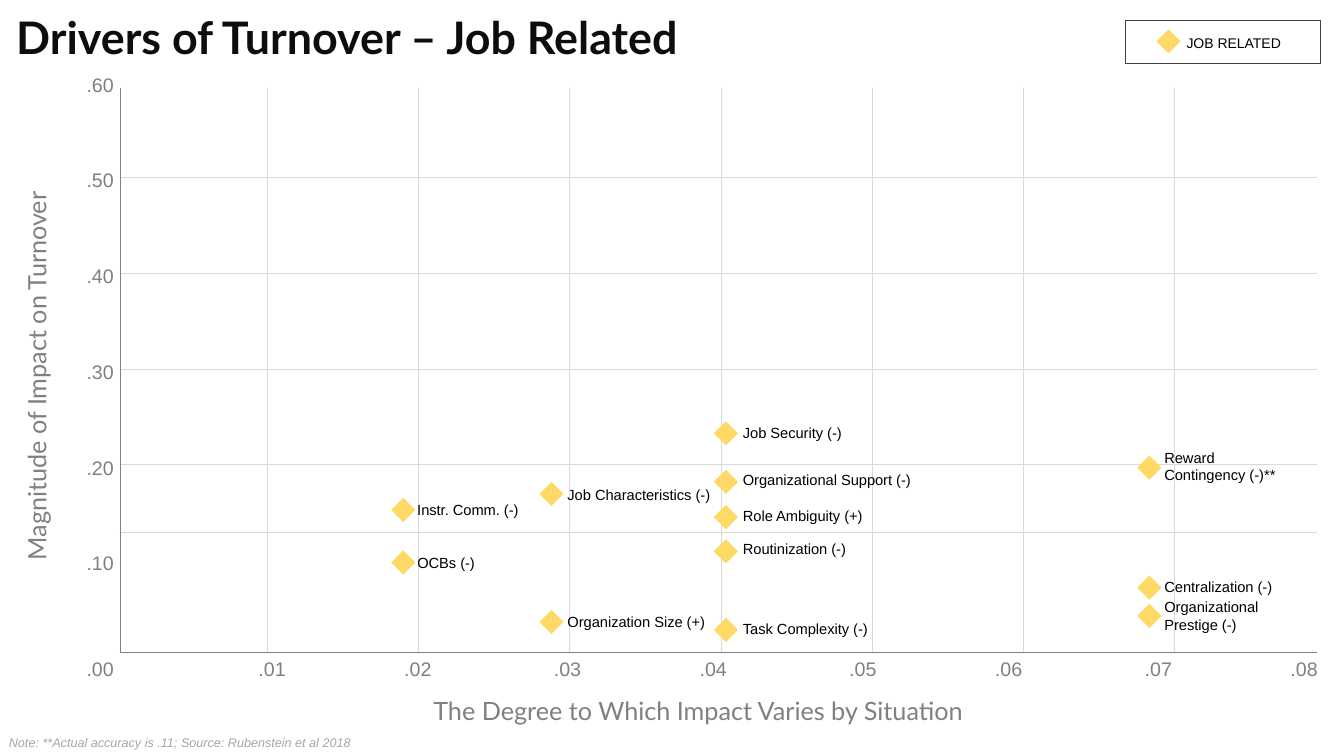
from lxml.etree import SubElement
from pptx import Presentation
from pptx.dml.color import RGBColor
from pptx.enum.shapes import MSO_CONNECTOR, MSO_SHAPE
from pptx.enum.text import MSO_ANCHOR, MSO_AUTO_SIZE, PP_ALIGN
from pptx.oxml.ns import qn
from pptx.util import Inches, Pt

COLORS = {
    "title": "0D0D0D",
    "text": "000000",
    "axis": "808080",
    "grid": "D9D9D9",
    "note": "A6A6A6",
    "frame": "404040",
    "driver": "FFD966",
    "paper": "FFFFFF",
}
LEFT, RIGHT, TOP, BOTTOM = 1.19, 13.06, 0.87, 6.47

# Per column: marker left, label left, and
# (driver, marker top, label top, label width)
DRIVERS = [
    (3.88, 4.04, [
        ("Instr. Comm. (-)", 4.94, 4.92, 1.23),
        ("OCBs (-)", 5.46, 5.44, 0.78),
    ]),
    (5.35, 5.53, [
        ("Job Characteristics (-)", 4.78, 4.77, 1.64),
        ("Organization Size (+)", 6.05, 6.03, 1.59),
    ]),
    (7.08, 7.27, [
        ("Job Security (-)", 4.18, 4.15, 1.2),
        ("Organizational Support (-)", 4.66, 4.62, 1.9),
        ("Role Ambiguity (+)", 5.01, 4.98, 1.42),
        ("Routinization (-)", 5.35, 5.3, 1.25),
        ("Task Complexity (-)", 6.13, 6.1, 1.48),
    ]),
    (11.28, 11.45, [
        ("Reward Contingency (-)**", 4.52, 4.4, 1.54),
        ("Centralization (-)", 5.71, 5.68, 1.29),
        ("Organizational Prestige (-)", 5.99, 5.88, 1.54),
    ]),
]
TWO_LINE = {"Reward Contingency (-)**", "Organizational Prestige (-)"}


def rgb(name):
    return RGBColor.from_string(COLORS[name])


def set_text(shape, text, size, color, font="Arial", wrap=False,
             align=PP_ALIGN.LEFT, anchor=MSO_ANCHOR.TOP):
    """Fill a shape with one formatted paragraph and return its font."""
    frame = shape.text_frame
    frame.text = text
    frame.word_wrap = wrap
    frame.auto_size = MSO_AUTO_SIZE.SHAPE_TO_FIT_TEXT
    frame.vertical_anchor = anchor
    para = frame.paragraphs[0]
    para.alignment = align
    style = para.runs[0].font
    style.name, style.size = font, Pt(size)
    style.color.rgb = rgb(color)
    return style


def add_text(slide, box, text, size, color, **format):
    shape = slide.shapes.add_textbox(*map(Inches, box))
    set_text(shape, text, size, color, **format)
    return shape


def add_line(slide, start, end, color):
    line = slide.shapes.add_connector(
        MSO_CONNECTOR.STRAIGHT, *map(Inches, start + end))
    line.line.color.rgb = rgb(color)
    line.line.width = Pt(0.25)
    SubElement(line._element.spPr, qn("a:effectLst"))


def add_mark(slide, left, top):
    mark = slide.shapes.add_shape(
        MSO_SHAPE.DIAMOND, *map(Inches, (left, top, 0.24, 0.24)))
    mark.shadow.inherit = False
    mark.fill.solid()
    mark.fill.fore_color.rgb = rgb("driver")
    mark.line.fill.background()


def add_title(slide):
    title = slide.shapes.title
    title.left, title.top = Inches(0.06), Inches(0.05)
    title.width, title.height = Inches(7), Inches(0.64)
    style = set_text(title, "Drivers of Turnover – Job Related", 32, "title", "Lato")
    style.bold = True


def add_grid(slide):
    for step in range(7):
        x = 2.65 + 1.5 * step
        add_line(slide, (x, TOP), (x, BOTTOM), "grid")
    for y in [1.76 + 0.95 * step for step in range(4)] + [5.28]:
        add_line(slide, (LEFT, y), (RIGHT, y), "grid")
    add_line(slide, (LEFT, TOP), (LEFT, BOTTOM), "axis")
    add_line(slide, (LEFT, BOTTOM), (RIGHT, BOTTOM), "axis")


def add_scales(slide):
    add_text(slide, (0.76, BOTTOM, 0.52, 0.4), ".00", 14, "axis")
    for step in range(1, 7):
        box = (0.76, 6.37 - 0.95 * step, 0.52, 0.4)
        add_text(slide, box, f".{step}0", 14, "axis")
    for step in range(1, 9):
        even = step % 2 == 0
        left = 1.0 + 1.465 * step - (0.02 if even else 0)
        box = (left, BOTTOM, 0.52 if even else 0.47, 0.34)
        add_text(slide, box, f".0{step}", 14, "axis")


def add_names(slide):
    """Add the names of both axes."""
    for text, box, turn in [
        ("Magnitude of Impact on Turnover", (-1.6, 3.53, 3.92, 0.4), 270),
        ("The Degree to Which Impact Varies by Situation",
         (4.13, 6.85, 5.59, 0.4), 0),
    ]:
        name = add_text(slide, box, text, 18, "axis", font="Lato",
                        align=PP_ALIGN.CENTER)
        name.fill.solid()
        name.fill.fore_color.rgb = rgb("paper")
        name.rotation = turn


def add_drivers(slide):
    for mark_left, label_left, points in DRIVERS:
        for driver, mark_top, label_top, width in points:
            wrap = driver in TWO_LINE
            box = (label_left, label_top, width, 0.45 if wrap else 0.28)
            add_text(slide, box, driver, 10.5, "text", wrap=wrap,
                     anchor=MSO_ANCHOR.MIDDLE)
            add_mark(slide, mark_left, mark_top)


def add_legend(slide):
    frame = slide.shapes.add_shape(
        MSO_SHAPE.RECTANGLE, *map(Inches, (11.16, 0.2, 1.94, 0.43)))
    frame.shadow.inherit = False
    frame.fill.background()
    frame.line.color.rgb = rgb("frame")
    frame.line.width = Pt(0.5)
    add_text(slide, (11.67, 0.29, 1.2, 0.27), "JOB RELATED", 10, "text",
             anchor=MSO_ANCHOR.MIDDLE)
    add_mark(slide, 11.47, 0.29)


def add_note(slide):
    note = add_text(slide, (-0.01, 7.24, 3.63, 0.24),
                    "Note: **Actual accuracy is .11; Source: Rubenstein et al 2018",
                    9, "note")
    note.text_frame.paragraphs[0].runs[0].font.italic = True


def main():
    deck = Presentation()
    deck.slide_width, deck.slide_height = Inches(13.33), Inches(7.5)
    slide = deck.slides.add_slide(deck.slide_layouts[5])
    add_title(slide)
    add_grid(slide)
    add_scales(slide)
    add_names(slide)
    add_drivers(slide)
    add_legend(slide)
    add_note(slide)
    deck.save("out.pptx")


if __name__ == "__main__":
    main()
